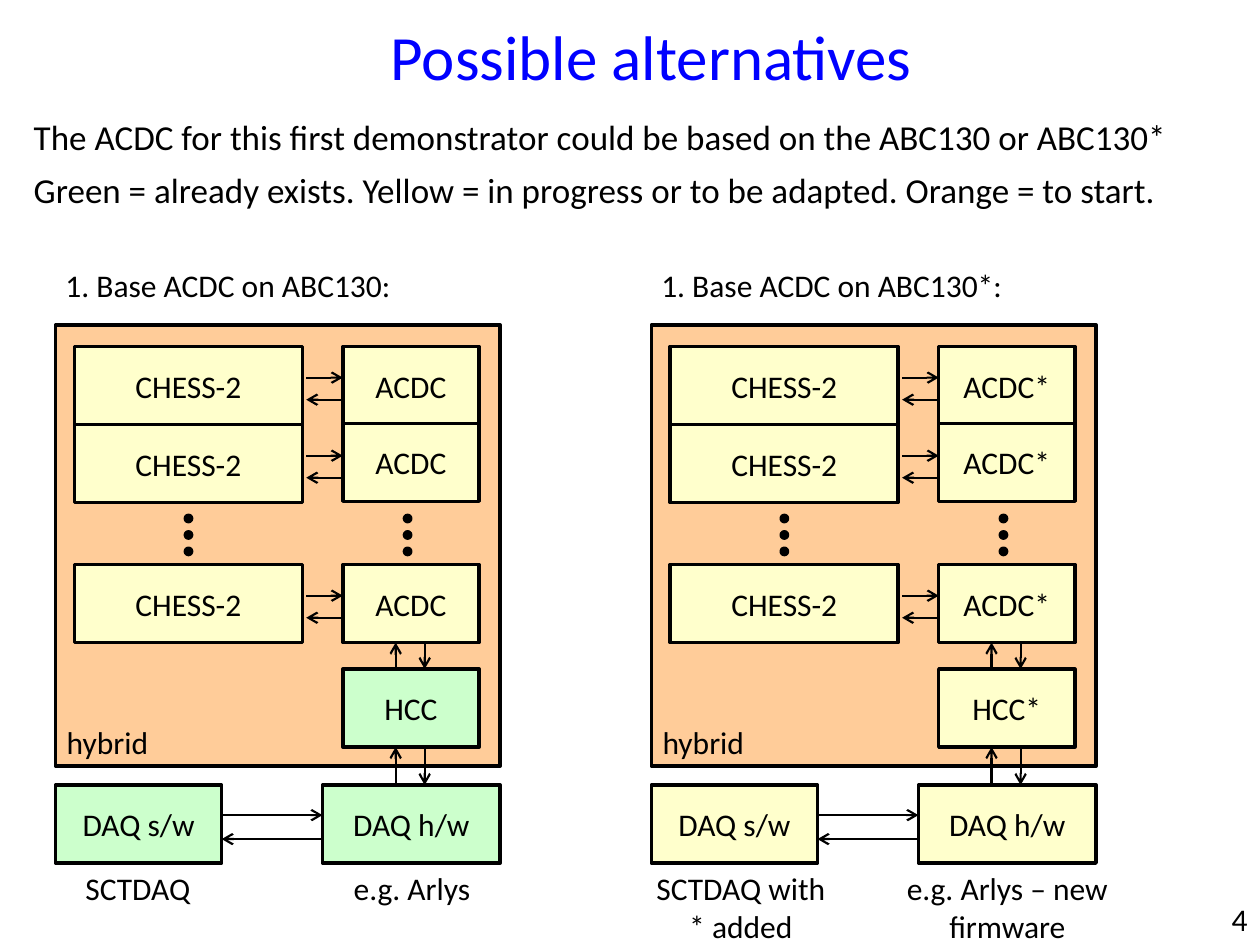
from dataclasses import dataclass

from lxml import etree
from pptx import Presentation
from pptx.dml.color import RGBColor
from pptx.enum.shapes import MSO_CONNECTOR, MSO_SHAPE
from pptx.enum.text import MSO_ANCHOR, MSO_AUTO_SIZE, PP_ALIGN
from pptx.oxml.ns import qn
from pptx.slide import Slide
from pptx.util import Pt

RECTANGLE, OVAL = MSO_SHAPE.RECTANGLE, MSO_SHAPE.OVAL
STRAIGHT = MSO_CONNECTOR.STRAIGHT
TOP, MIDDLE = MSO_ANCHOR.TOP, MSO_ANCHOR.MIDDLE
LEFT, CENTER, RIGHT = PP_ALIGN.LEFT, PP_ALIGN.CENTER, PP_ALIGN.RIGHT
NO_AUTOSIZE = MSO_AUTO_SIZE.NONE

COLORS = {
    "text": "000000",
    "title": "0000FF",
    "start": "FFCC99",
    "progress": "FFFFCC",
    "exists": "CCFFCC",
}

BOX_HEIGHT = 44.6
CHIP_ROWS = (198, 242.6, 322.6)
READOUT_ROWS = (198, 241.9, 322.6)
DOT_TOP, DOT_STEP, DOT_SIZE = 294.5, 9.4, 3.6
CHIP_LEFT, CHIP_WIDTH = 10.8, 130.3
READOUT_LEFT, READOUT_WIDTH = 164.2, 77.8
HCC_TOP, DAQ_TOP = 382.3, 448.6
SOFTWARE_WIDTH, HARDWARE_LEFT, HARDWARE_WIDTH = 95, 152.6, 101.5


@dataclass
class Area:
    left: float
    top: float
    width: float
    height: float

    def lengths(self) -> tuple:
        return Pt(self.left), Pt(self.top), Pt(self.width), Pt(self.height)


@dataclass
class Panel:
    left: float
    heading: str
    suffix: str
    state: str
    software_note: str
    software_area: Area
    hardware_note: str
    hardware_area: Area


PANELS = (
    Panel(31.7, "1. Base ACDC on ABC130:", "", "exists",
          "SCTDAQ", Area(29.5, 493.2, 98.6, 28.8),
          "e.g. Arlys", Area(184.3, 493.2, 102.2, 28.8)),
    Panel(372.2, "1. Base ACDC on ABC130*:", "*", "progress",
          "SCTDAQ with * added", Area(364.3, 493.2, 118.1, 51.1),
          "e.g. Arlys – new firmware", Area(498.2, 493.2, 154.8, 51.1)),
)


def color(name: str) -> RGBColor:
    return RGBColor.from_string(COLORS[name])


def write_text(shape, lines: tuple, size: float = 18, align=LEFT,
               anchor=TOP, tint: str = "text", space: float = 0) -> None:
    frame = shape.text_frame
    frame_format = {"word_wrap": True, "auto_size": NO_AUTOSIZE, "vertical_anchor": anchor}
    for name, value in frame_format.items():
        setattr(frame, name, value)
    for index, line in enumerate(lines):
        paragraph = frame.add_paragraph() if index else frame.paragraphs[0]
        paragraph.alignment = align
        paragraph.space_after = Pt(space)
        run = paragraph.add_run()
        run.text = line
        for name, value in {"name": "Calibri", "size": Pt(size)}.items():
            setattr(run.font, name, value)
        run.font.color.rgb = color(tint)


def add_label(slide: Slide, area: Area, *lines: str, **text_format) -> None:
    write_text(slide.shapes.add_textbox(*area.lengths()), lines, **text_format)


def add_filled(shapes, kind, area: Area, fill: str):
    shape = shapes.add_shape(kind, *area.lengths())
    shape.shadow.inherit = False
    shape.fill.solid()
    shape.fill.fore_color.rgb = color(fill)
    shape.line.color.rgb = color("text")
    shape.line.width = Pt(2)
    return shape


def add_box(slide: Slide, area: Area, fill: str, text: str) -> None:
    shape = add_filled(slide.shapes, RECTANGLE, area, fill)
    write_text(shape, (text,), align=CENTER, anchor=MIDDLE)


def add_dots(slide: Slide, left: float) -> None:
    group = slide.shapes.add_group_shape()
    for index in range(3):
        area = Area(left, DOT_TOP + index * DOT_STEP, DOT_SIZE, DOT_SIZE)
        add_filled(group.shapes, OVAL, area, "text")


def add_arrow(slide: Slide, start: tuple, end: tuple) -> None:
    connector = slide.shapes.add_connector(STRAIGHT, *map(Pt, start + end))
    connector.line.color.rgb = color("text")
    connector.line.width = Pt(1.25)
    line = connector.line._get_or_add_ln()
    etree.SubElement(line, qn("a:tailEnd"), type="arrow")
    etree.SubElement(connector._element.spPr, qn("a:effectLst"))


def add_horizontal_pair(slide: Slide, left: float, right: float,
                        upper: float, lower: float) -> None:
    add_arrow(slide, (left, upper), (right, upper))
    add_arrow(slide, (right, lower), (left, lower))


def add_vertical_pair(slide: Slide, left: float, top: float, bottom: float) -> None:
    right = left + 16.6
    add_arrow(slide, (left, bottom), (left, top))
    add_arrow(slide, (right, top), (right, bottom))


def add_panel(slide: Slide, panel: Panel) -> None:
    left = panel.left
    readout_left = left + READOUT_LEFT
    hardware_left = left + HARDWARE_LEFT
    add_filled(slide.shapes, RECTANGLE, Area(left, 185.8, 254.2, 252), "start")
    for chip_top, readout_top in zip(CHIP_ROWS, READOUT_ROWS):
        add_box(slide, Area(left + CHIP_LEFT, chip_top, CHIP_WIDTH, BOX_HEIGHT),
                "progress", "CHESS-2")
        add_box(slide, Area(readout_left, readout_top, READOUT_WIDTH, BOX_HEIGHT),
                "progress", "ACDC" + panel.suffix)
        add_horizontal_pair(slide, left + 143.3, readout_left, chip_top + 17.8, chip_top + 30.4)
    for dot_left in (74.2, 199.4):
        add_dots(slide, left + dot_left)

    add_box(slide, Area(readout_left, HCC_TOP, READOUT_WIDTH, BOX_HEIGHT),
            panel.state, "HCC" + panel.suffix)
    add_box(slide, Area(hardware_left, DAQ_TOP, HARDWARE_WIDTH, BOX_HEIGHT),
            panel.state, "DAQ h/w")
    add_box(slide, Area(left, DAQ_TOP, SOFTWARE_WIDTH, BOX_HEIGHT), panel.state, "DAQ s/w")
    add_horizontal_pair(slide, left + SOFTWARE_WIDTH, hardware_left, 465.8, 479.5)
    for upper, lower in ((CHIP_ROWS[-1], HCC_TOP), (HCC_TOP, DAQ_TOP)):
        add_vertical_pair(slide, left + 194.4, upper + BOX_HEIGHT, lower)

    add_label(slide, Area(left - 0.7, 409.7, 108.7, 28.8), "hybrid", space=6)
    add_label(slide, Area(left - 1.4, 148.3, 216, 28.8), panel.heading, space=6)
    add_label(slide, panel.hardware_area, panel.hardware_note, align=CENTER, space=6)
    add_label(slide, panel.software_area, panel.software_note, align=CENTER, space=6)


def main() -> None:
    presentation = Presentation()
    presentation.slide_width, presentation.slide_height = Pt(720), Pt(540)
    slide = presentation.slides.add_slide(presentation.slide_layouts[6])
    add_label(slide, Area(48.2, 9.4, 648, 44.6), "Possible alternatives",
              size=36, align=CENTER, anchor=MIDDLE, tint="title")
    add_label(slide, Area(666, 510.5, 54, 28.8), "4", align=RIGHT, anchor=MIDDLE)
    add_label(slide, Area(12.2, 62.6, 692.6, 61.9),
              "The ACDC for this first demonstrator could be based on the ABC130 or ABC130*",
              "Green = already exists. Yellow = in progress or to be adapted. Orange = to start.",
              size=20, space=6)
    for panel in PANELS:
        add_panel(slide, panel)
    presentation.save("out.pptx")


if __name__ == "__main__":
    main()
